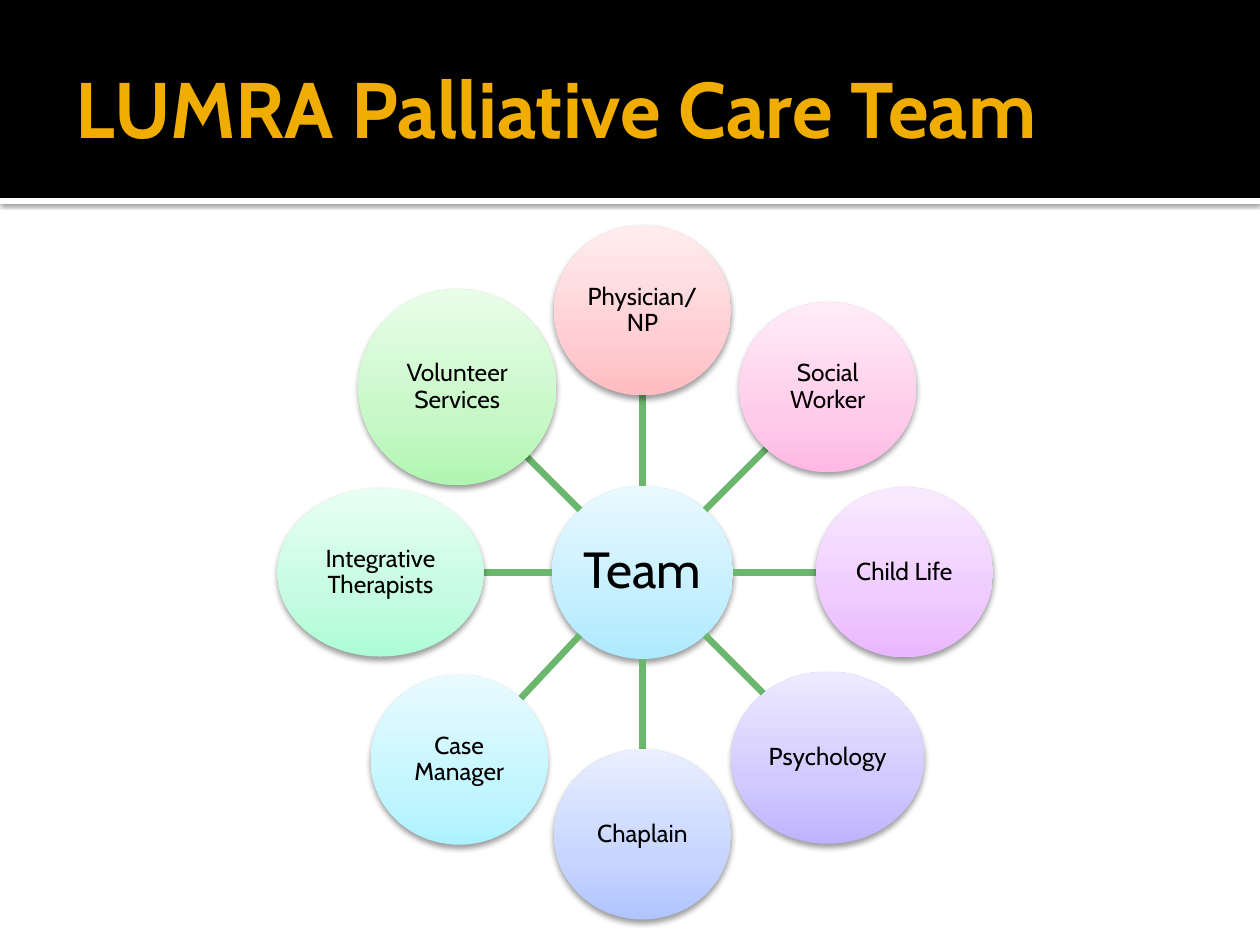
"""Build the palliative care team slide: a hub with eight roles around it."""
from copy import deepcopy
from math import cos, hypot, radians, sin

from lxml.etree import SubElement
from pptx import Presentation
from pptx.dml.color import RGBColor
from pptx.enum.shapes import MSO_CONNECTOR, MSO_SHAPE
from pptx.enum.text import MSO_ANCHOR, PP_ALIGN
from pptx.oxml.ns import qn
from pptx.util import Emu, Pt

TITLE = "LUMRA Palliative Care Team"
COLORS = {"black": "000000", "white": "FFFFFF", "title": "F0AD00", "spoke": "6BB76D"}
FONT = "Cabin"

HUB = ("Team", (181, 173), ("ADE9FF", "C5EFFF", "E9F9FF"))
ROLES = [
    ("Physician/ NP", (177, 170), ("FFBCC2", "FFCFD3", "FFEDEE")),
    ("Social Worker", (177, 170), ("FFB9E4", "FFCDEB", "FFECF7")),
    ("Child Life", (177, 170), ("EAB6FF", "EFCBFF", "F9EBFF")),
    ("Psychology", (193, 172), ("BFB3FF", "D1C9FF", "EDEAFF")),
    ("Chaplain", (177, 170), ("B0C4FF", "C7D5FF", "E9EFFF")),
    ("Case Manager", (177, 170), ("ADF2FF", "C4F6FF", "E9FBFF")),
    ("Integrative Therapists", (206, 168), ("ACFDD5", "C5FCE1", "E8FFF3")),
    ("Volunteer Services", (198, 196), ("B0F6B1", "C8F8C8", "E9FDE9")),
]
NUDGES = {"Case Manager": (2, 2)}
GRADIENT_POSITIONS = (0, 0.35, 1)
CENTER = (642.5, 572.5)
RING_RADIUS = 262
SLIDE_SIZE = (1260, 945)
BAND_HEIGHT = 198


def px(value):
    return Emu(round(value * 914400 / 126))


def rgb(value):
    return RGBColor.from_string(value)


def place(shape, left, top, width, height):
    shape.left, shape.top, shape.width, shape.height = map(px, (left, top, width, height))


def add_shadow(shape, blur, distance, alpha):
    shape.shadow.inherit = False
    effects = shape._element.spPr.find(qn("a:effectLst"))
    shadow = SubElement(effects, qn("a:outerShdw"), blurRad=str(Pt(blur)),
                        dist=str(Pt(distance)), dir="5400000", rotWithShape="0")
    color = SubElement(shadow, qn("a:srgbClr"), val=COLORS["black"])
    SubElement(color, qn("a:alpha"), val=str(alpha * 1000))


def add_band(slide, top, height, color):
    band = slide.shapes.add_shape(MSO_SHAPE.RECTANGLE, 0, px(top), px(SLIDE_SIZE[0]), px(height))
    band.fill.solid()
    band.fill.fore_color.rgb = rgb(color)
    band.line.fill.background()
    band.shadow.inherit = False
    return band


def format_text(shape, size, color, insets, bold=False):
    frame = shape.text_frame
    frame.word_wrap = True
    frame.vertical_anchor = MSO_ANCHOR.MIDDLE
    frame.margin_left, frame.margin_top, frame.margin_right, frame.margin_bottom = map(px, insets)
    paragraph = frame.paragraphs[0]
    font = paragraph.runs[0].font
    font.name, font.size, font.bold = FONT, Pt(size), bold
    font.color.rgb = rgb(color)
    return paragraph


def add_circle(slide, center, label, size, colors, font_size):
    (x, y), (width, height) = center, size
    circle = slide.shapes.add_shape(MSO_SHAPE.OVAL, 0, 0, 0, 0)
    place(circle, x - width / 2, y - height / 2, width, height)
    circle.fill.gradient()
    circle.fill.gradient_angle = 90
    stop_list = circle._element.spPr.find(qn("a:gradFill")).find(qn("a:gsLst"))
    stop_list.append(deepcopy(stop_list[-1]))
    for stop, color, position in zip(circle.fill.gradient_stops, colors, GRADIENT_POSITIONS):
        stop.color.rgb = rgb(color)
        stop.position = position
    circle.line.fill.background()
    add_shadow(circle, 3.5, 2, 38)
    circle.text_frame.text = label
    paragraph = format_text(circle, font_size, COLORS["black"], (1, 1, 1, 1))
    paragraph.alignment = PP_ALIGN.CENTER
    paragraph.line_spacing = 0.9


def edge_point(center, size, dx, dy):
    reach = 1 / hypot(dx / (size[0] / 2), dy / (size[1] / 2))
    return center[0] + dx * reach, center[1] + dy * reach


def add_spoke(slide, start, end):
    spoke = slide.shapes.add_connector(MSO_CONNECTOR.STRAIGHT, *map(px, (*start, *end)))
    spoke.line.color.rgb = rgb(COLORS["spoke"])
    spoke.line.width = Pt(3.78)
    SubElement(spoke._element.spPr, qn("a:effectLst"))


def add_title(slide):
    rule = add_band(slide, BAND_HEIGHT, 6, COLORS["white"])
    add_shadow(rule, 2.5, 0.8, 60)
    add_band(slide, 0, BAND_HEIGHT, COLORS["black"])
    title = slide.shapes.title
    slide.shapes._spTree.append(title._element)
    place(title, 63, 21, 1134, 173)
    title.text_frame.text = TITLE
    paragraph = format_text(title, 45, COLORS["title"], (13, 6, 6, 6), bold=True)
    paragraph.alignment = PP_ALIGN.LEFT


def add_team(slide):
    hub_label, hub_size, hub_colors = HUB
    add_circle(slide, CENTER, hub_label, hub_size, hub_colors, 29)
    for index, (label, size, colors) in enumerate(ROLES):
        angle = radians(index * 360 / len(ROLES) - 90)
        dx, dy = cos(angle), sin(angle)
        nudge_x, nudge_y = NUDGES.get(label, (0, 0))
        center = (CENTER[0] + RING_RADIUS * dx + nudge_x, CENTER[1] + RING_RADIUS * dy + nudge_y)
        add_spoke(slide, edge_point(CENTER, hub_size, dx, dy), edge_point(center, size, -dx, -dy))
        add_circle(slide, center, label, size, colors, 14)


def main():
    presentation = Presentation()
    presentation.slide_width, presentation.slide_height = map(px, SLIDE_SIZE)
    slide = presentation.slides.add_slide(presentation.slide_layouts[5])
    add_title(slide)
    add_team(slide)
    presentation.save("out.pptx")


if __name__ == "__main__":
    main()
